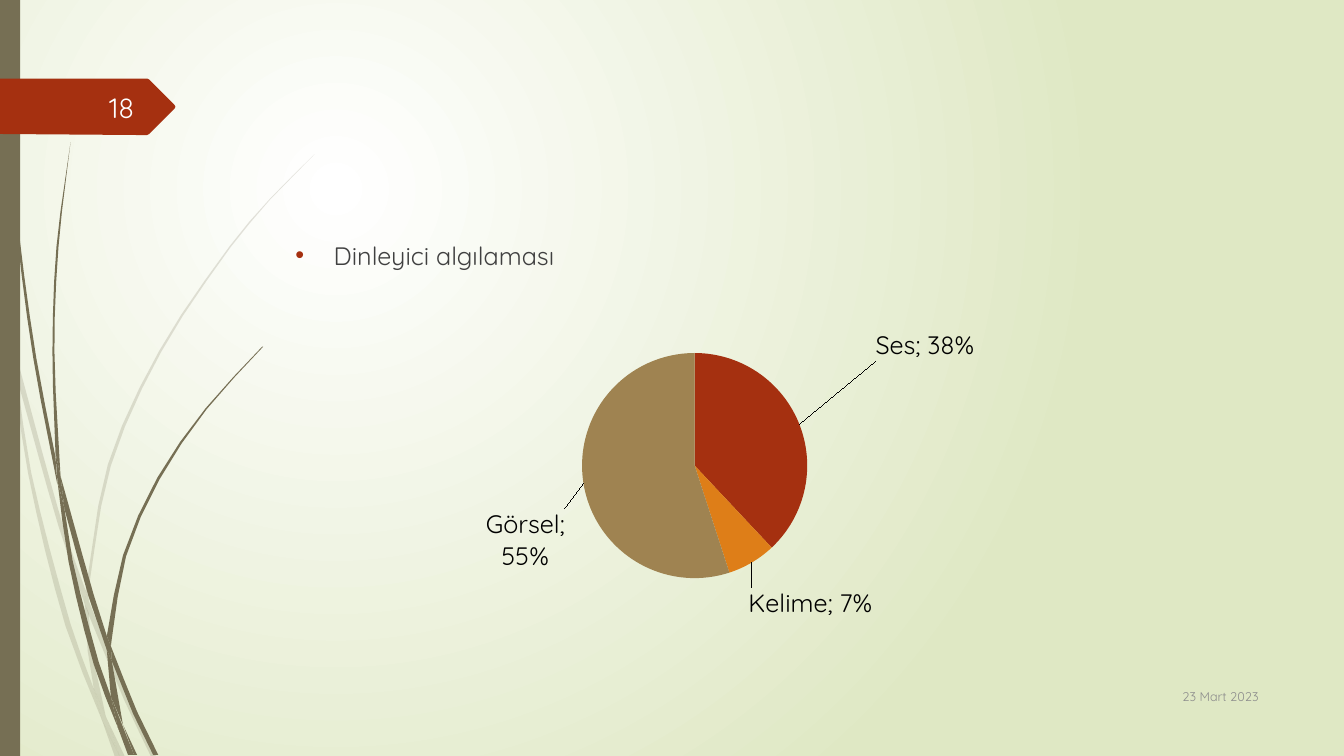
from math import dist
from typing import NamedTuple

from pptx import Presentation
from pptx.chart.data import CategoryChartData
from pptx.dml.color import RGBColor
from pptx.enum.chart import XL_CHART_TYPE
from pptx.enum.shapes import MSO_SHAPE
from pptx.enum.text import MSO_ANCHOR, MSO_AUTO_SIZE, PP_ALIGN
from pptx.oxml import parse_xml
from pptx.oxml.ns import nsdecls, qn
from pptx.util import Inches, Pt

PIE, RECT = XL_CHART_TYPE.PIE, MSO_SHAPE.RECTANGLE
MIDDLE, RIGHT, NO_FIT = MSO_ANCHOR.MIDDLE, PP_ALIGN.RIGHT, MSO_AUTO_SIZE.NONE
FONT = "Quicksand"
CELL = Inches(0.01)  # the slide is a grid of 1333 columns and 750 rows
COLUMNS, ROWS = 1333, 750
CURVE_STEP = 40  # cells between two points of a curve

WHITE = RGBColor(0xFF, 0xFF, 0xFF)
PALE_GREEN = RGBColor(0xDF, 0xE8, 0xC4)
OLIVE = RGBColor(0x76, 0x6F, 0x54)
RUST = RGBColor(0xA5, 0x30, 0x10)
ORANGE = RGBColor(0xDE, 0x7E, 0x18)
TAN = RGBColor(0x9F, 0x83, 0x51)
DARK_GREY = RGBColor(0x40, 0x40, 0x40)
GREY = RGBColor(0x8C, 0x8C, 0x8C)
NEAR_WHITE = RGBColor(0xFE, 0xFF, 0xFF)
BLACK = RGBColor(0, 0, 0)

Point = tuple[float, float]


class Box(NamedTuple):
    left: int
    top: int
    width: int
    height: int

    def emu(self) -> list[int]:
        return [v * CELL for v in self]


class Blade(NamedTuple):
    """A piece of grass: one smooth side out, another smooth side back."""
    out: list[Point]
    back: list[Point]


class Note(NamedTuple):
    text: str
    box: Box
    size: int
    color: RGBColor


class Slice(NamedTuple):
    name: str
    value: float
    color: RGBColor
    label_shift: Point  # shares of the chart's width and height


FAINT_GRASS = [
    Blade([(11, 350), (9, 322), (0, 282)], [(0, 299), (10, 344)]),
    Blade([(14, 345), (62, 520), (85, 586)], [(84, 599), (58, 522), (17, 376)]),
    Blade([(88, 596), (127, 692), (155, 751)], [(150, 751), (123, 694), (88, 610)]),
    Blade([(105, 711), (124, 751)], [(119, 751)]),
    Blade([(11, 350), (28, 470), (65, 621), (101, 714)],
          [(93, 683), (70, 619), (31, 469), (17, 376)]),
    Blade([(84, 599), (87, 646), (93, 683), (105, 711)], [(91, 646), (88, 608)]),
    Blade([(85, 586), (107, 461), (158, 348), (228, 244), (268, 197), (312, 153)],
          [(268, 198), (229, 245), (160, 349), (110, 462), (88, 584), (88, 596)]),
    Blade([(101, 714), (114, 751)], [(119, 751)]),
    Blade([(88, 596), (88, 610)], [(84, 599), (85, 586)]),
    Blade([(93, 683), (101, 714), (119, 751)], [(105, 711)]),
]
SOLID_GRASS = [
    Blade([(3, 0), (7, 110), (17, 233), (33, 355), (57, 481)],
          [(55, 453), (36, 355), (19, 232), (8, 109), (4, 0)]),
    Blade([(60, 472), (93, 590), (106, 631)], [(106, 645), (88, 592), (64, 505)]),
    Blade([(110, 641), (136, 706), (157, 749)], [(152, 749), (132, 708), (111, 656)]),
    Blade([(57, 477), (68, 557), (93, 659), (117, 722)],
          [(110, 691), (98, 657), (72, 556), (64, 505)]),
    Blade([(60, 472), (54, 349), (58, 245), (70, 141)],
          [(70, 141), (56, 245), (52, 349), (55, 449)]),
    Blade([(122, 719), (136, 749)], [(133, 749)]),
    Blade([(55, 449), (60, 472), (64, 505)], [(57, 477)]),
    Blade([(106, 631), (122, 551), (156, 474), (204, 405), (260, 344)],
          [(261, 344), (205, 406), (158, 476), (125, 552), (111, 633), (110, 641)]),
    Blade([(117, 722), (127, 749)], [(131, 749)]),
    Blade([(106, 645), (110, 691), (122, 719)], [(111, 656)]),
    Blade([(106, 631), (106, 645)], [(111, 656), (110, 641)]),
    Blade([(110, 691), (117, 722), (130, 749)], [(133, 749), (116, 706)]),
]
RIBBON = [(0, 78), (146, 78), (148, 79), (173, 104), (174, 106), (173, 108), (148, 133),
          (146, 134), (136, 134), (0, 133)]
SIDEBAR = Box(0, 0, 20, ROWS)
BODY = Box(283, 233, 975, 413)
CHART = Box(370, 273, 638, 402)
PAGE_NUMBER = Note("18", Box(58, 86, 85, 40), 20, NEAR_WHITE)
DATE = Note("23 Mart 2023", Box(1133, 670, 125, 41), 9, GREY)
SLICES = [
    Slice("Ses", 0.38, RUST, (0.11, -0.15)),
    Slice("Kelime", 0.07, ORANGE, (-0.01, 0.05)),
    Slice("Görsel", 0.55, TAN, (-0.02, 0.06)),
]
PLOT_LAYOUT = {"x": 0.02, "y": 0.17, "w": 0.96, "h": 0.6}


def smooth(points: list[Point]) -> list[Point]:
    """Sample a spline through the points, with tangents weighted by chord length."""
    last = len(points) - 1
    if not last:
        return points
    tangents = []
    for i in range(last + 1):
        a, b, c = points[max(i - 1, 0)], points[i], points[min(i + 1, last)]
        length = dist(a, b) + dist(b, c)
        tangents.append([(v - u) / length for u, v in zip(a, c)])
    curve = [points[0]]
    for i, (p, q) in enumerate(zip(points, points[1:])):
        reach = dist(p, q)
        steps = max(1, round(reach / CURVE_STEP))
        for t in (k / steps for k in range(1, steps + 1)):
            h = 3 * t**2 - 2 * t**3
            m, n = reach * (t**3 - 2 * t**2 + t), reach * (t**3 - t**2)
            curve.append(tuple(u + h * (v - u) + m * d + n * e for u, v, d, e
                               in zip(p, q, tangents[i], tangents[i + 1])))
    return curve


def paint(sp, color: RGBColor, alpha: int = 100) -> None:
    sp.shadow.inherit = False
    sp.line.fill.background()
    sp.fill.solid()
    sp.fill.fore_color.rgb = color
    if alpha < 100:
        rgb = sp.element.spPr.find(f"{qn('a:solidFill')}/{qn('a:srgbClr')}")
        rgb.append(parse_xml(f'<a:alpha {nsdecls("a")} val="{alpha * 1000}"/>'))


def add_outline(shapes, points: list[Point], color: RGBColor, alpha: int = 100) -> None:
    start, *rest = [(x * CELL, y * CELL) for x, y in points]
    builder = shapes.build_freeform(*start)
    builder.add_line_segments(rest, close=True)
    paint(builder.convert_to_shape(), color, alpha)


def add_grass(s, blades: list[Blade], alpha: int) -> None:
    group = s.shapes.add_group_shape()
    for blade in blades:
        add_outline(group.shapes, smooth(blade.out) + smooth(blade.back), OLIVE, alpha)


def format_font(font, size: int, color: RGBColor) -> None:
    for name, value in {"name": FONT, "size": Pt(size)}.items():
        setattr(font, name, value)
    font.color.rgb = color


def add_note(s, note: Note) -> None:
    tf = s.shapes.add_textbox(*note.box.emu()).text_frame
    tf.word_wrap, tf.vertical_anchor = True, MIDDLE
    p = tf.paragraphs[0]
    p.alignment = RIGHT
    r = p.add_run()
    r.text = note.text
    format_font(r.font, note.size, note.color)


def fill_body(sp) -> None:
    sp.left, sp.top, sp.width, sp.height = BODY.emu()
    tf = sp.text_frame
    tf.auto_size = NO_FIT
    p = tf.paragraphs[0]
    p.space_before = Pt(10)
    r = p.add_run()
    r.text = "Dinleyici algılaması"
    format_font(r.font, 18, DARK_GREY)
    pPr = p._p.get_or_add_pPr()
    pPr.set("marL", str(38 * CELL))
    pPr.set("indent", str(-38 * CELL))
    pPr.append(parse_xml(f'<a:buClr {nsdecls("a")}><a:srgbClr val="{RUST}"/></a:buClr>'))
    pPr.append(parse_xml(f'<a:buChar {nsdecls("a")} char="•"/>'))


def set_background(s) -> None:
    fill = s.background.fill
    fill.gradient()
    for stop, color in zip(fill.gradient_stops, (WHITE, PALE_GREEN)):
        stop.color.rgb = color
    grad = s.element.find(f".//{qn('a:gradFill')}")
    grad.replace(grad.find(qn("a:lin")), parse_xml(
        f'<a:path {nsdecls("a")} path="circle">'
        '<a:fillToRect l="50000" t="50000" r="100000" b="100000"/></a:path>'))


def chart_layout(values: dict[str, float], head: str = "") -> str:
    tags = "".join(f'<c:{k} val="{v}"/>' for k, v in values.items())
    return f'<c:layout {nsdecls("c")}><c:manualLayout>{head}{tags}</c:manualLayout></c:layout>'


def explosion(percent: int):
    return parse_xml(f'<c:explosion {nsdecls("c")} val="{percent}"/>')


def add_pie(s) -> None:
    data = CategoryChartData(number_format="0%")
    data.categories = [part.name for part in SLICES]
    data.add_series("Series 1", [part.value for part in SLICES])
    chart = s.shapes.add_chart(PIE, *CHART.emu(), data).chart
    chart.has_title = chart.has_legend = False
    format_font(chart.font, 18, BLACK)
    plot = chart.plots[0]
    plot.vary_by_categories = True
    series = plot.series[0]
    labels = series.data_labels
    for name, value in {"show_value": True, "show_category_name": True, "number_format": "0%",
                        "number_format_is_linked": False}.items():
        setattr(labels, name, value)
    flags = {"LegendKey": 0, "Val": 1, "CatName": 1, "SerName": 0, "Percent": 0, "BubbleSize": 0}
    shows = "".join(f'<c:show{k} val="{v}"/>' for k, v in flags.items())
    ser = series._element
    for i, part in enumerate(SLICES):
        fill = series.points[i].format.fill
        fill.solid()
        fill.fore_color.rgb = part.color
        ser.findall(qn("c:dPt"))[i].find(qn("c:spPr")).addprevious(explosion(0))
        ser.find(qn("c:dLbls")).insert(i, parse_xml(
            f'<c:dLbl {nsdecls("c")}><c:idx val="{i}"/>'
            f'{chart_layout(dict(zip("xy", part.label_shift)))}'
            f'<c:numFmt formatCode="0%" sourceLinked="0"/><c:dLblPos val="bestFit"/>{shows}'
            '<c:separator>; </c:separator></c:dLbl>'))
    ser.find(qn("c:dPt")).addprevious(explosion(8))
    area = chart.element.find(f".//{qn('c:plotArea')}")
    for old in area.findall(qn("c:layout")):
        area.remove(old)
    head = '<c:layoutTarget val="inner"/><c:xMode val="edge"/><c:yMode val="edge"/>'
    area.insert(0, parse_xml(chart_layout(PLOT_LAYOUT, head)))


def main() -> None:
    prs = Presentation()
    prs.slide_width, prs.slide_height = COLUMNS * CELL, ROWS * CELL
    s = prs.slides.add_slide(prs.slide_layouts[1])
    title = s.shapes.title.element
    title.getparent().remove(title)
    set_background(s)
    fill_body(s.placeholders[1])
    add_grass(s, FAINT_GRASS, 20)
    add_grass(s, SOLID_GRASS, 100)
    paint(s.shapes.add_shape(RECT, *SIDEBAR.emu()), OLIVE)
    add_outline(s.shapes, RIBBON, RUST)
    add_note(s, PAGE_NUMBER)
    add_pie(s)
    add_note(s, DATE)
    prs.save("out.pptx")


if __name__ == "__main__":
    main()
